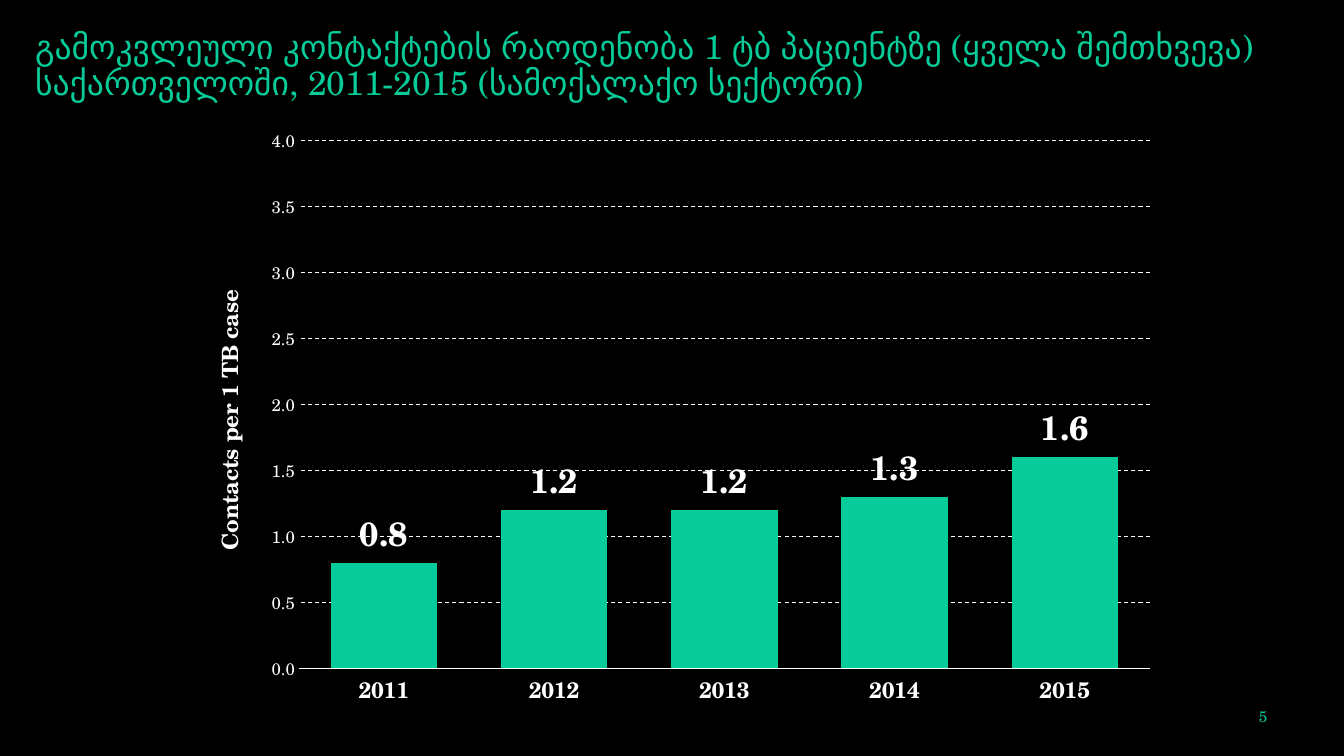
from lxml import etree
from pptx import Presentation
from pptx.chart.data import CategoryChartData
from pptx.dml.color import RGBColor
from pptx.enum.chart import XL_CHART_TYPE, XL_LABEL_POSITION, XL_TICK_MARK
from pptx.enum.dml import MSO_LINE
from pptx.enum.lang import MSO_LANGUAGE_ID
from pptx.enum.text import MSO_ANCHOR, PP_ALIGN
from pptx.oxml.ns import qn
from pptx.util import Inches, Pt

COLUMN = XL_CHART_TYPE.COLUMN_CLUSTERED
OUTSIDE = XL_LABEL_POSITION.OUTSIDE_END
NO_TICK = XL_TICK_MARK.NONE
DASH = MSO_LINE.DASH
GEORGIAN = MSO_LANGUAGE_ID.GEORGIAN
BOTTOM, MIDDLE = MSO_ANCHOR.BOTTOM, MSO_ANCHOR.MIDDLE
LEFT, RIGHT = PP_ALIGN.LEFT, PP_ALIGN.RIGHT
BLACK = RGBColor(0x00, 0x00, 0x00)
WHITE = RGBColor(0xFF, 0xFF, 0xFF)
GREEN = RGBColor(0x07, 0xCB, 0x98)
FONT = "TeX Gyre Schola"


def set_font(font, size, color=WHITE, bold=False):
    font.name, font.size, font.bold = FONT, Pt(size), bold
    font.color.rgb = color


def add_text(text, box, size, anchor=MIDDLE, align=LEFT, spacing=1.0):
    tf = s.shapes.add_textbox(*map(Inches, box)).text_frame
    tf.word_wrap = True
    tf.vertical_anchor = anchor
    p = tf.paragraphs[0]
    p.alignment, p.line_spacing = align, spacing
    r = p.add_run()
    r.text = text
    set_font(r.font, size, GREEN)
    r.font.language_id = GEORGIAN


prs = Presentation()
prs.slide_width, prs.slide_height = Inches(13.33), Inches(7.5)
s = prs.slides.add_slide(prs.slide_layouts[6])
s.background.fill.solid()
s.background.fill.fore_color.rgb = BLACK

add_text("გამოკვლეული კონტაქტების რაოდენობა 1 ტბ პაციენტზე (ყველა შემთხვევა) "
         "საქართველოში, 2011-2015 (სამოქალაქო სექტორი)",
         (0.25, 0.22, 12.9, 0.85), 24, anchor=BOTTOM, spacing=0.9)

data = CategoryChartData(number_format="0.0")
data.categories = [str(year) for year in range(2011, 2016)]
data.add_series("Series 1", (0.8, 1.2, 1.2, 1.3, 1.6))
box = map(Inches, (1.68, 1.2, 10.11, 5.97))
chart = s.shapes.add_chart(COLUMN, *box, data).chart
set_font(chart.font, 10)
chart.has_legend = False
chart.has_title = False

plot = chart.plots[0]
plot.gap_width = 60
plot.vary_by_categories = False
bars = plot.series[0]
bars.format.fill.solid()
bars.format.fill.fore_color.rgb = GREEN
plot.has_data_labels = True
labels = plot.data_labels
labels.show_value = True
labels.number_format, labels.number_format_is_linked = "0.0", False
labels.position = OUTSIDE
set_font(labels.font, 24, bold=True)

years, contacts = chart.category_axis, chart.value_axis
for axis, size, bold in ((years, 16, True), (contacts, 12, False)):
    axis.major_tick_mark = axis.minor_tick_mark = NO_TICK
    set_font(axis.tick_labels.font, size, bold=bold)
contacts.minimum_scale, contacts.maximum_scale, contacts.major_unit = 0, 4, 0.5
contacts.tick_labels.number_format = "0.0"
contacts.tick_labels.number_format_is_linked = False
contacts.has_major_gridlines = True
contacts.format.line.fill.background()
for line in (years.format.line, contacts.major_gridlines.format.line):
    line.color.rgb = WHITE
    line.width = Pt(0.75)
contacts.major_gridlines.format.line.dash_style = DASH

p = contacts.axis_title.text_frame.paragraphs[0]
r = p.add_run()
r.text = "Contacts per 1 TB case"
set_font(r.font, 16, bold=True)

area = chart._chartSpace.chart.plotArea
title = contacts.axis_title._element
edges = (("xMode", "edge"), ("yMode", "edge"))
plot_place = (("layoutTarget", "inner"), *edges,
              ("x", 0.127), ("y", 0.033), ("w", 0.835), ("h", 0.877))
title_place = (*edges, ("x", 0.035), ("y", 0.274))
for parent, index, place in ((area, 0, plot_place), (title, 1, title_place)):
    for old in parent.findall(qn("c:layout")):
        parent.remove(old)
    layout = etree.Element(qn("c:layout"))
    parent.insert(index, layout)
    manual = etree.SubElement(layout, qn("c:manualLayout"))
    for tag, value in place:
        etree.SubElement(manual, qn("c:" + tag)).set("val", str(value))

add_text("5", (11.76, 6.98, 0.91, 0.25), 11, align=RIGHT)

prs.save("out.pptx")
